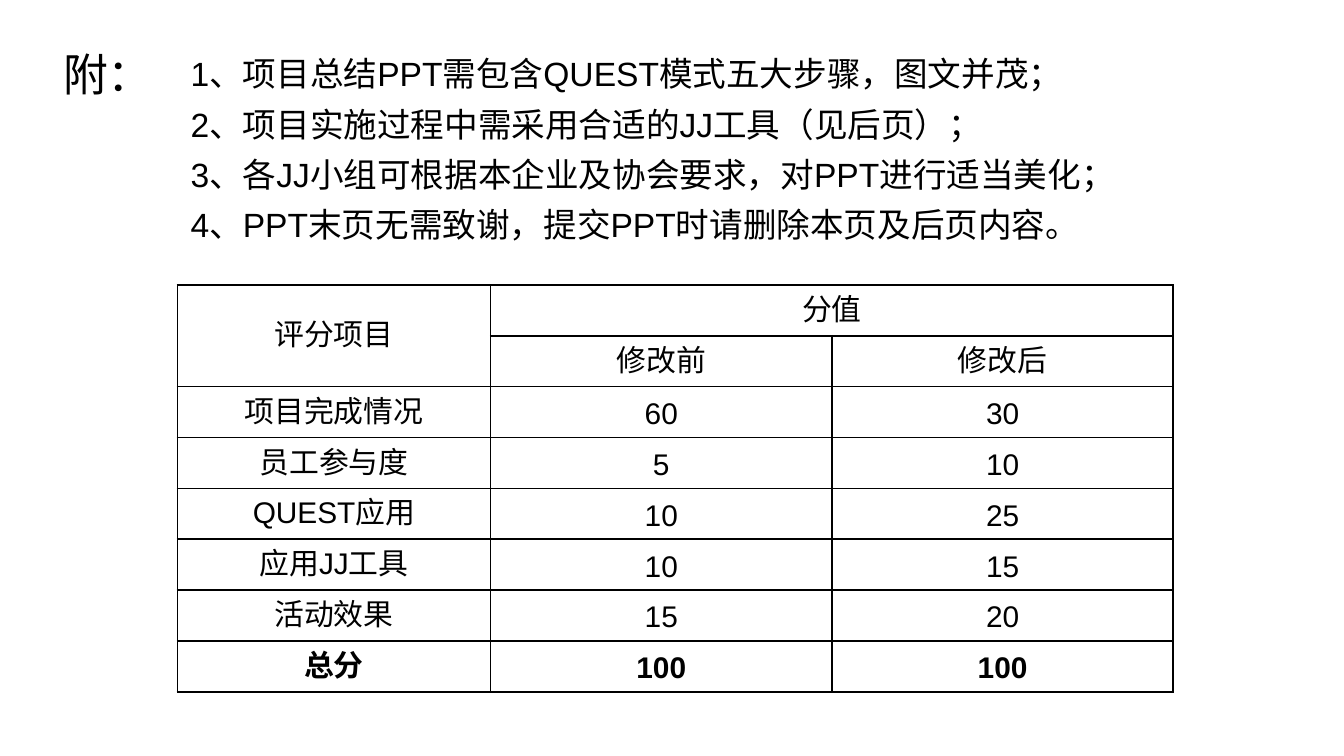
from lxml import etree
from pptx import Presentation
from pptx.dml.color import RGBColor
from pptx.enum.text import MSO_ANCHOR, PP_ALIGN
from pptx.oxml.ns import qn
from pptx.util import Inches, Pt

MIDDLE = MSO_ANCHOR.MIDDLE
LEFT, CENTER, JUSTIFY = PP_ALIGN.LEFT, PP_ALIGN.CENTER, PP_ALIGN.JUSTIFY
COLORS = {"text": "000000", "border": "000000", "background": "FFFFFF"}
FONT = "Arial"

# Content
TITLE = "附："
NOTES = [
    "1、项目总结PPT需包含QUEST模式五大步骤，图文并茂；",
    "2、项目实施过程中需采用合适的JJ工具（见后页）；",
    "3、各JJ小组可根据本企业及协会要求，对PPT进行适当美化；",
    "4、PPT末页无需致谢，提交PPT时请删除本页及后页内容。",
]
SCORES = [
    ("评分项目", "分值", ""),
    ("", "修改前", "修改后"),
    ("项目完成情况", "60", "30"),
    ("员工参与度", "5", "10"),
    ("QUEST应用", "10", "25"),
    ("应用JJ工具", "10", "15"),
    ("活动效果", "15", "20"),
    ("总分", "100", "100"),
]
COL_WIDTHS = [2.33, 2.54, 2.54]
TABLE_HEIGHT = 3.02


def format_paragraph(p, size, align, spacing, bold=False):
    p.alignment = align
    p.line_spacing = spacing
    for r in p.runs:
        r.font.name = FONT
        r.font.size = Pt(size)
        r.font.bold = bold
        r.font.color.rgb = RGBColor.from_string(COLORS["text"])


def add_borders(cell):
    tc_pr = cell._tc.get_or_add_tcPr()
    for i, side in enumerate(("lnL", "lnR", "lnT", "lnB")):
        ln = etree.Element(qn(f"a:{side}"), w=str(Pt(1)))
        fill = etree.SubElement(ln, qn("a:solidFill"))
        etree.SubElement(fill, qn("a:srgbClr"), val=COLORS["border"])
        tc_pr.insert(i, ln)


# A 16:9 slide
prs = Presentation()
prs.slide_width, prs.slide_height = Inches(10), Inches(10 * 9 / 16)
s = prs.slides.add_slide(prs.slide_layouts[5])
s.background.fill.solid()
s.background.fill.fore_color.rgb = RGBColor.from_string(COLORS["background"])

# Title
title = s.shapes.title
title.left, title.top = Inches(0.37), Inches(0.28)
title.width, title.height = Inches(0.85), Inches(0.58)
tf = title.text_frame
tf.text = TITLE
tf.vertical_anchor = MIDDLE
tf.margin_right = 0
format_paragraph(tf.paragraphs[0], 24, LEFT, 0.9)

# Numbered notes
tf = s.shapes.add_textbox(Inches(1.32), Inches(0.38), Inches(7.3), Inches(1.61)).text_frame
tf.word_wrap = True
tf.text = "\n".join(NOTES)
for p in tf.paragraphs:
    format_paragraph(p, 18, JUSTIFY, 0.9)
    p.space_before = Pt(7.5)

# Score table
table = s.shapes.add_table(len(SCORES), len(COL_WIDTHS), Inches(1.32), Inches(2.12),
                           Inches(sum(COL_WIDTHS)), Inches(TABLE_HEIGHT)).table
for col, width in zip(table.columns, COL_WIDTHS):
    col.width = Inches(width)
for i, values in enumerate(SCORES):
    for j, value in enumerate(values):
        cell = table.cell(i, j)
        cell.text = value
        cell.vertical_anchor = MIDDLE
        cell.fill.background()
        add_borders(cell)
        format_paragraph(cell.text_frame.paragraphs[0], 16, CENTER, Pt(20),
                         bold=i == len(SCORES) - 1)
table.cell(0, 0).merge(table.cell(1, 0))
table.cell(0, 1).merge(table.cell(0, 2))

prs.save("out.pptx")
